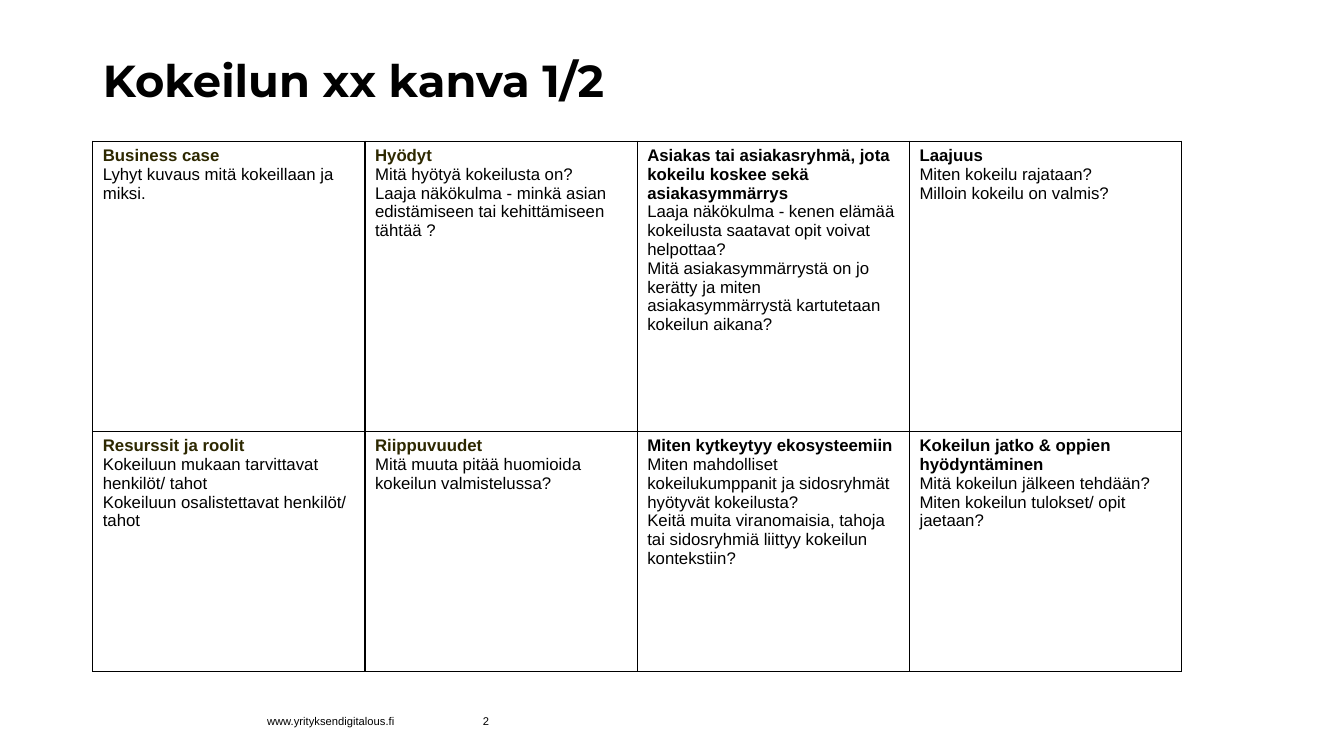
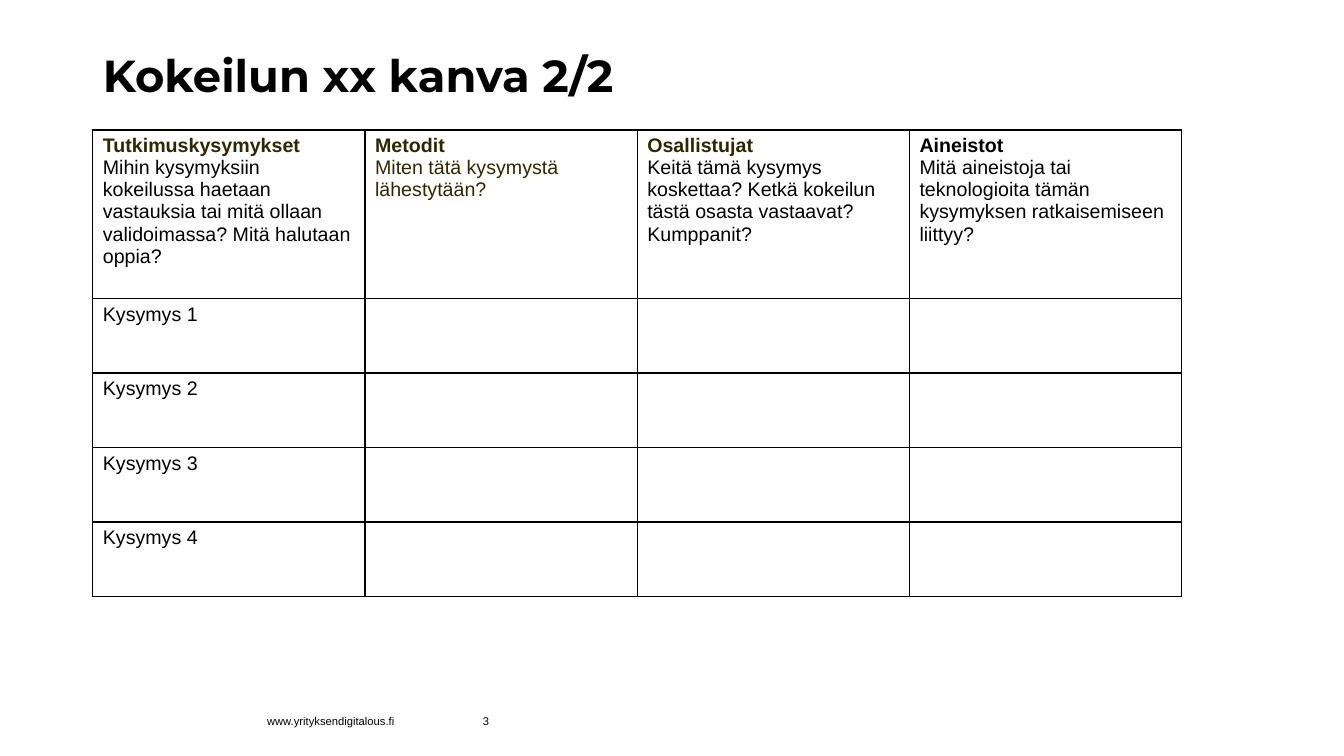
from dataclasses import dataclass, field
from typing import Any

from lxml.etree import SubElement
from pptx import Presentation
from pptx.dml.color import RGBColor
from pptx.enum.text import MSO_ANCHOR as Anchor, MSO_AUTO_SIZE as AutoSize, PP_ALIGN as Align
from pptx.oxml.ns import qn
from pptx.util import Inches, Pt

BLACK, OLIVE, WHITE = "000000", "2D2800", "FFFFFF"
LEFT, COLUMN_WIDTH, COLUMNS = 0.92, 2.7, 4
TITLE_ONLY_LAYOUT = 5
TITLE_FORMAT = {"name": "Montserrat", "size": Pt(32), "bold": True}
FOOTER_FORMAT = {"name": "Arial", "size": Pt(8), "bold": False}
FOOTER_SITE = "www.yrityksendigitalous.fi"


@dataclass
class Topic:
    heading: str = ""
    prompts: list[str] = field(default_factory=list)
    heading_color: str = BLACK
    prompt_color: str = BLACK


@dataclass
class Canvas:
    title: str
    number: int
    title_height: float
    top: float
    text_size: int
    row_heights: list[float]
    topics: list[list[Topic]]


def rgb(color: str) -> RGBColor:
    return RGBColor.from_string(color)


def set_values(target: Any, values: dict[str, Any]) -> None:
    for attribute, value in values.items():
        setattr(target, attribute, value)


def format_font(font: Any, values: dict[str, Any], color: str = BLACK) -> None:
    set_values(font, values)
    font.color.rgb = rgb(color)


def add_title(slide: Any, canvas: Canvas) -> None:
    title = slide.shapes.title
    set_values(title, {"left": Inches(LEFT), "top": Inches(0.4),
                       "width": Inches(11.5), "height": Inches(canvas.title_height)})
    frame = title.text_frame
    frame.text = canvas.title
    set_values(frame, {"auto_size": AutoSize.NONE, "word_wrap": True,
                       "vertical_anchor": Anchor.MIDDLE})
    heading = frame.paragraphs[0]
    set_values(heading, {"alignment": Align.LEFT, "line_spacing": 0.9})
    format_font(heading.runs[0].font, TITLE_FORMAT)


def add_footer(slide: Any, text: str, left: float, width: float) -> None:
    footer = slide.shapes.add_textbox(Inches(left), Inches(6.95), Inches(width), Inches(0.4))
    frame = footer.text_frame
    set_values(frame, {"text": text, "word_wrap": True, "vertical_anchor": Anchor.MIDDLE})
    format_font(frame.paragraphs[0].runs[0].font, FOOTER_FORMAT)


def add_borders(cell: Any) -> None:
    properties = cell._tc.get_or_add_tcPr()
    for position, side in enumerate(("a:lnL", "a:lnR", "a:lnT", "a:lnB")):
        border = SubElement(properties, qn(side), w=str(Pt(1)))
        stroke = SubElement(border, qn("a:solidFill"))
        SubElement(stroke, qn("a:srgbClr"), val=BLACK)
        properties.insert(position, border)


def fill_cell(cell: Any, topic: Topic, size: int) -> None:
    cell.fill.solid()
    cell.fill.fore_color.rgb = rgb(WHITE)
    add_borders(cell)
    frame = cell.text_frame
    frame.text = "\n".join([topic.heading, *topic.prompts])
    for index, paragraph in enumerate(frame.paragraphs):
        is_heading = index == 0 and bool(topic.prompts)
        color = topic.heading_color if is_heading else topic.prompt_color
        values = {"name": "Arial", "size": Pt(size), "bold": is_heading}
        for font in [paragraph.font, *(run.font for run in paragraph.runs)]:
            format_font(font, values, color)


def add_topics(slide: Any, canvas: Canvas) -> None:
    grid = slide.shapes.add_table(
        len(canvas.row_heights), COLUMNS, Inches(LEFT), Inches(canvas.top),
        Inches(COLUMN_WIDTH * COLUMNS), Inches(sum(canvas.row_heights))).table
    set_values(grid, {"first_row": False, "horz_banding": False})
    for column in grid.columns:
        column.width = Inches(COLUMN_WIDTH)
    for row, height, topics in zip(grid.rows, canvas.row_heights, canvas.topics):
        row.height = Inches(height)
        for cell, topic in zip(row.cells, topics):
            fill_cell(cell, topic, canvas.text_size)


def question_row(number: int) -> list[Topic]:
    return [Topic(f"Kysymys {number}"), *[Topic()] * (COLUMNS - 1)]


CANVASES = [
    Canvas("Kokeilun xx kanva 1/2", 2, 0.84, 1.4, 12, [2.88, 2.38], [
        [
            Topic("Business case", ["Lyhyt kuvaus mitä kokeillaan ja miksi."], OLIVE),
            Topic("Hyödyt", [
                "Mitä hyötyä kokeilusta on?",
                "Laaja näkökulma - minkä asian edistämiseen tai kehittämiseen tähtää ?",
            ], OLIVE),
            Topic("Asiakas tai asiakasryhmä, jota kokeilu koskee sekä asiakasymmärrys", [
                "Laaja näkökulma - kenen elämää kokeilusta saatavat opit voivat helpottaa?",
                "Mitä asiakasymmärrystä on jo kerätty ja miten asiakasymmärrystä "
                "kartutetaan kokeilun aikana?",
            ]),
            Topic("Laajuus", ["Miten kokeilu rajataan?", "Milloin kokeilu on valmis?"]),
        ],
        [
            Topic("Resurssit ja roolit", [
                "Kokeiluun mukaan tarvittavat henkilöt/ tahot",
                "Kokeiluun osalistettavat henkilöt/ tahot",
            ], OLIVE),
            Topic("Riippuvuudet", ["Mitä muuta pitää huomioida kokeilun valmistelussa?"], OLIVE),
            Topic("Miten kytkeytyy ekosysteemiin", [
                "Miten mahdolliset kokeilukumppanit ja sidosryhmät hyötyvät kokeilusta?",
                "Keitä muita viranomaisia, tahoja tai sidosryhmiä liittyy kokeilun kontekstiin?",
            ]),
            Topic("Kokeilun jatko & oppien hyödyntäminen", [
                "Mitä kokeilun jälkeen tehdään?",
                "Miten kokeilun tulokset/ opit jaetaan?",
            ]),
        ],
    ]),
    Canvas("Kokeilun xx kanva 2/2", 3, 0.74, 1.29, 14, [1.67] + [0.74] * 4, [
        [
            Topic("Tutkimuskysymykset", [
                "Mihin kysymyksiin kokeilussa haetaan vastauksia tai mitä ollaan "
                "validoimassa? Mitä halutaan oppia?",
            ], OLIVE),
            Topic("Metodit", ["Miten tätä kysymystä lähestytään?"], OLIVE, OLIVE),
            Topic("Osallistujat", [
                "Keitä tämä kysymys koskettaa? Ketkä kokeilun tästä osasta vastaavat? Kumppanit?",
            ], OLIVE),
            Topic("Aineistot", [
                "Mitä aineistoja tai teknologioita tämän kysymyksen ratkaisemiseen liittyy?",
            ]),
        ],
        *[question_row(number) for number in range(1, 5)],
    ]),
]


def main() -> None:
    deck = Presentation()
    set_values(deck, {"slide_width": Inches(13.33), "slide_height": Inches(7.5)})
    for canvas in CANVASES:
        slide = deck.slides.add_slide(deck.slide_layouts[TITLE_ONLY_LAYOUT])
        add_title(slide, canvas)
        add_topics(slide, canvas)
        add_footer(slide, FOOTER_SITE, 2.55, 2.09)
        add_footer(slide, str(canvas.number), 4.69, 1.19)
    deck.save("out.pptx")


if __name__ == "__main__":
    main()
